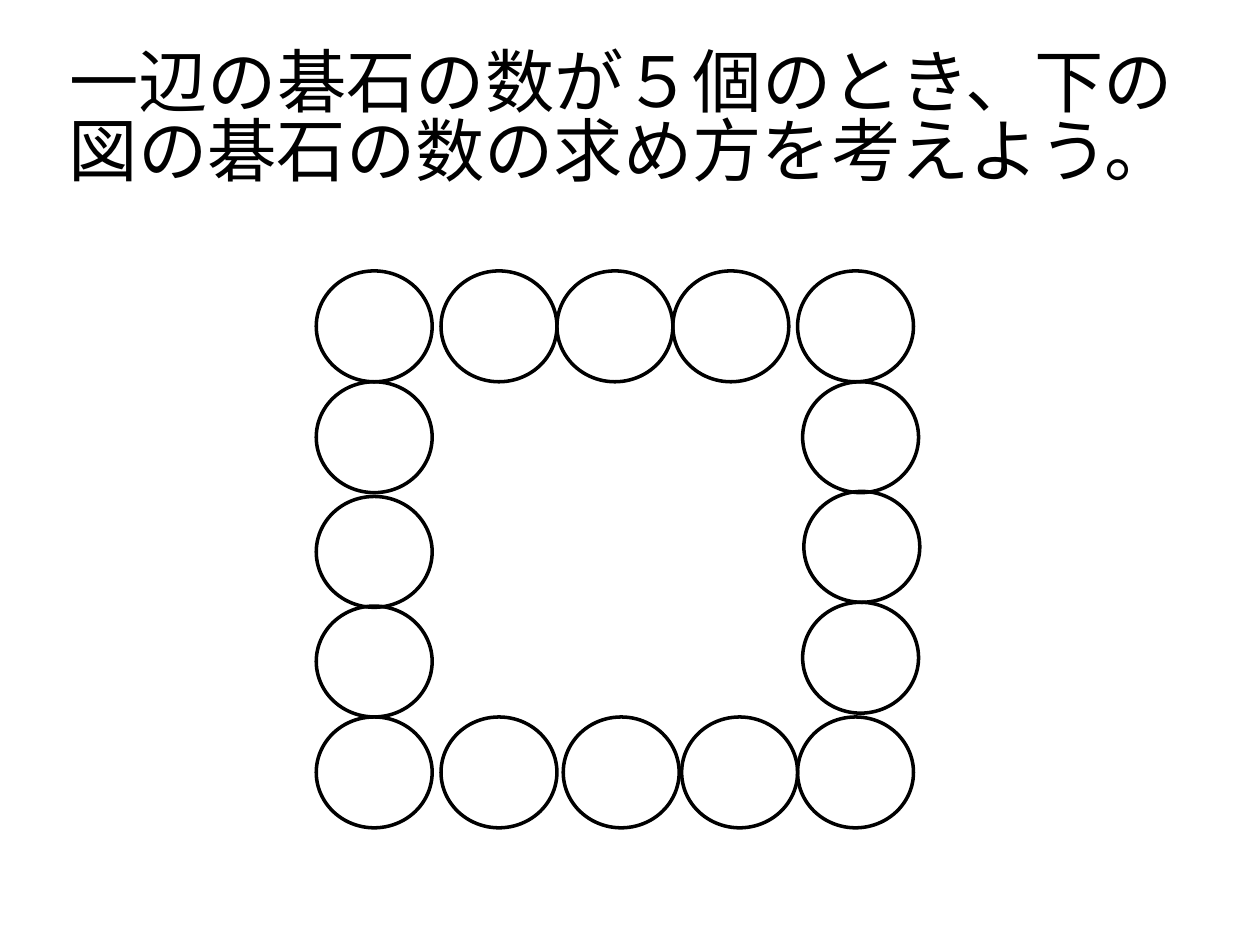
from pptx import Presentation
from pptx.dml.color import RGBColor
from pptx.enum.shapes import MSO_SHAPE
from pptx.enum.text import MSO_ANCHOR, MSO_AUTO_SIZE, PP_ALIGN
from pptx.util import Inches, Pt

BLACK = RGBColor(0, 0, 0)
STONE_SHAPE = MSO_SHAPE.FLOWCHART_CONNECTOR
MIDDLE = MSO_ANCHOR.MIDDLE
NO_AUTOFIT = MSO_AUTO_SIZE.NONE
CENTER = PP_ALIGN.CENTER

TITLE = "一辺の碁石の数が５個のとき、下の図の碁石の数の求め方を考えよう。"
STONE_WIDTH, STONE_HEIGHT = 0.92, 0.88
TOP, BOTTOM, LEFT = 2.15, 5.69, 2.51
TOP_ROW = [2.51, 3.5, 4.42, 5.34, 6.33]
BOTTOM_ROW = [2.51, 3.5, 4.47, 5.41, 6.33]
LEFT_COLUMN = [3.03, 3.94, 4.81]
RIGHT_COLUMN = [(6.37, 3.03), (6.38, 3.9), (6.37, 4.78)]

deck = Presentation()
deck.slide_width, deck.slide_height = Inches(10), Inches(7.5)
page = deck.slides.add_slide(deck.slide_layouts[5])

title = page.shapes.title
title.left, title.top = Inches(0.43), Inches(0.21)
title.width, title.height = Inches(9), Inches(1.5)
frame = title.text_frame
frame.text = TITLE
frame.word_wrap = True
frame.auto_size = NO_AUTOFIT
frame.vertical_anchor = MIDDLE
para = frame.paragraphs[0]
para.alignment = CENTER
para.line_spacing = 0.83
font = para.runs[0].font
font.name = "Calibri"
font.size = Pt(39.6)
font.color.rgb = BLACK

stones = [(left, TOP) for left in TOP_ROW]
stones += [(LEFT, top) for top in LEFT_COLUMN]
stones += [(left, BOTTOM) for left in BOTTOM_ROW]
stones += RIGHT_COLUMN

ring = page.shapes.add_group_shape()
for left, top in stones:
    stone = ring.shapes.add_shape(
        STONE_SHAPE, Inches(left), Inches(top), Inches(STONE_WIDTH), Inches(STONE_HEIGHT)
    )
    stone.shadow.inherit = False
    stone.fill.background()
    stone.line.color.rgb = BLACK
    stone.line.width = Pt(2)

deck.save("out.pptx")
